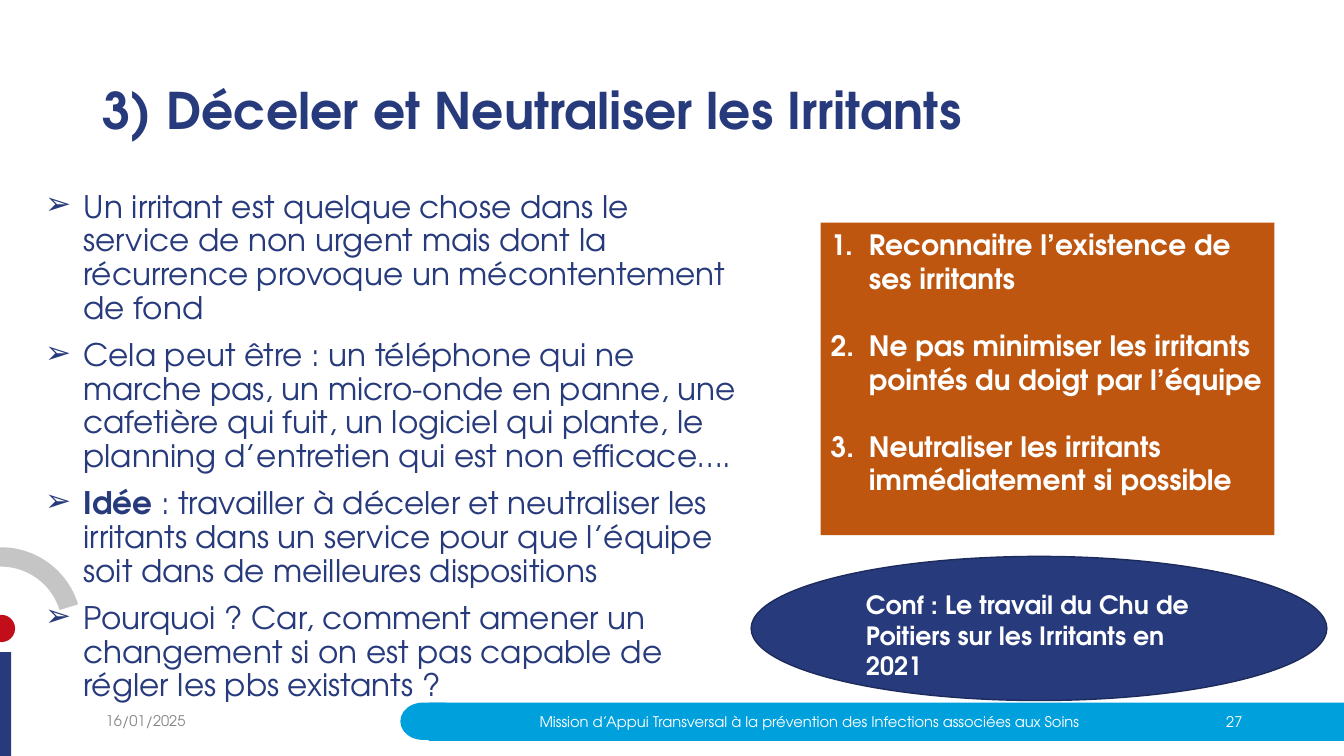
from dataclasses import dataclass

from lxml.etree import SubElement
from pptx import Presentation
from pptx.dml.color import RGBColor
from pptx.enum.shapes import MSO_SHAPE as Preset
from pptx.enum.text import MSO_ANCHOR as Anchor, PP_ALIGN as Align
from pptx.oxml.ns import qn
from pptx.util import Inches, Pt

FONT = "TeX Gyre Adventor"
NAVY, NAVY_EDGE, BLUE = "273A7C", "1D2B5C", "00A0DD"
ORANGE, RED, SILVER, GREY, WHITE = "BE560F", "C20E1A", "C5C5C5", "868686", "FFFFFF"
HANGING = 0.38

Box = tuple[float, float, float, float]


@dataclass
class Block:
    """A shape, drawn with a plain fill."""
    preset: Preset
    box: Box
    fill: str
    edge: str | None = None
    rotation: float = 0


@dataclass
class Style:
    size: float
    color: str
    bold: bool = False
    align: Align = Align.LEFT
    anchor: Anchor = Anchor.TOP
    line_spacing: float = 1.0
    gap: float = 0
    bullet: str | None = None
    numbered: bool = False


@dataclass
class Label:
    """A text box; each paragraph is a list of (text, bold) parts or a string."""
    box: Box
    paragraphs: list
    style: Style


def rgb(color: str) -> RGBColor:
    return RGBColor.from_string(color)


def draw_block(slide, block: Block):
    shape = slide.shapes.add_shape(block.preset, *map(Inches, block.box))
    shape.shadow.inherit = False
    shape.rotation = block.rotation
    shape.fill.solid()
    shape.fill.fore_color.rgb = rgb(block.fill)
    if block.edge:
        shape.line.color.rgb = rgb(block.edge)
        shape.line.width = Pt(1)
    else:
        shape.line.fill.background()
    return shape


def add_marker(paragraph, style: Style) -> None:
    properties = paragraph._p.get_or_add_pPr()
    properties.set("marL", str(Inches(HANGING)))
    properties.set("indent", str(-Inches(HANGING)))
    if style.numbered:
        SubElement(properties, qn("a:buFont"), typeface=FONT)
        SubElement(properties, qn("a:buAutoNum"), type="arabicPeriod")
    else:
        tint = SubElement(properties, qn("a:buClr"))
        SubElement(tint, qn("a:srgbClr"), val=style.color)
        SubElement(properties, qn("a:buFont"), typeface=FONT)
        SubElement(properties, qn("a:buChar"), char=style.bullet)


def write(frame, paragraphs: list, style: Style) -> None:
    frame.word_wrap = True
    frame.vertical_anchor = style.anchor
    for index, content in enumerate(paragraphs):
        paragraph = frame.add_paragraph() if index else frame.paragraphs[0]
        paragraph.alignment = style.align
        paragraph.line_spacing = style.line_spacing
        paragraph.space_before = Pt(style.gap if index else 0)
        if style.bullet or style.numbered:
            add_marker(paragraph, style)
        parts = [(content, style.bold)] if isinstance(content, str) else content
        for text, bold in parts:
            run = paragraph.add_run()
            run.text = text
            run.font.name = FONT
            run.font.size = Pt(style.size)
            run.font.bold = bold
            run.font.color.rgb = rgb(style.color)


def draw_label(slide, label: Label) -> None:
    frame = slide.shapes.add_textbox(*map(Inches, label.box)).text_frame
    write(frame, label.paragraphs, label.style)


# Left-edge decoration and footer band
ARC = Block(Preset.BLOCK_ARC, (-0.79, 5.43, 1.6, 1.6), SILVER)
DECORATION = [
    Block(Preset.RECTANGLE, (0, 6.47, 0.11, 1.03), NAVY),
    Block(Preset.OVAL, (-0.12, 6.1, 0.27, 0.27), RED),
    Block(Preset.RECTANGLE, (4.25, 6.97, 9.08, 0.38), BLUE),
    Block(Preset.FLOWCHART_DELAY, (3.97, 6.97, 0.45, 0.37), BLUE, rotation=180),
]

# Orange box of steps and conference bubble
STEPS_BOX = Block(Preset.RECTANGLE, (8.14, 2.21, 4.5, 3.1), ORANGE)
STEPS = [
    "Reconnaitre l’existence de ses irritants",
    "Ne pas minimiser les irritants pointés du doigt par l’équipe",
    "Neutraliser les irritants immédiatement si possible",
]
STEPS_STYLE = Style(20, WHITE, bold=True, gap=24, numbered=True)
CONFERENCE = Block(Preset.OVAL, (7.45, 5.52, 5.71, 1.43), NAVY, edge=NAVY_EDGE)

# Texts
LABELS = [
    Label((0.92, 0.4, 11.5, 1.45), ["3) Déceler et Neutraliser les Irritants"],
          Style(36, NAVY, bold=True, anchor=Anchor.MIDDLE, line_spacing=0.9)),
    Label((0.35, 1.85, 7.1, 4.91), [
        "Un irritant est quelque chose dans le service de non urgent mais dont la "
        "récurrence provoque un mécontentement de fond",
        "Cela peut être : un téléphone qui ne marche pas, un micro-onde en panne, "
        "une cafetière qui fuit, un logiciel qui plante, le planning d’entretien "
        "qui est non efficace….",
        [("Idée ", True),
         (": travailler à déceler et neutraliser les irritants dans un service pour "
          "que l’équipe soit dans de meilleures dispositions", False)],
        "Pourquoi ? Car, comment amener un changement si on est pas capable de "
        "régler les pbs existants ?",
    ], Style(22.2, NAVY, line_spacing=0.9, gap=10, bullet="➢")),
    Label((0.95, 6.95, 3, 0.4), ["16/01/2025"],
          Style(10.5, GREY, anchor=Anchor.MIDDLE)),
    Label((4.42, 6.96, 7.22, 0.4),
          ["Mission d’Appui Transversal à la prévention des Infections associées aux Soins"],
          Style(10.5, WHITE, align=Align.CENTER, anchor=Anchor.MIDDLE)),
    Label((11.83, 6.96, 0.59, 0.4), ["27"],
          Style(10.5, WHITE, align=Align.RIGHT, anchor=Anchor.MIDDLE)),
    Label((8.49, 5.8, 3.62, 1.01),
          ["Conf : Le travail du Chu de Poitiers sur les Irritants en 2021"],
          Style(18, WHITE, bold=True)),
]


def main() -> None:
    deck = Presentation()
    deck.slide_width, deck.slide_height = Inches(13.33), Inches(7.5)
    slide = deck.slides.add_slide(deck.slide_layouts[6])

    # Arc: start angle, end angle (0.6 per degree), thickness over width
    arc = draw_block(slide, ARC)
    for index, value in enumerate((197 * 0.6, 343 * 0.6, 0.12)):
        arc.adjustments[index] = value
    for block in DECORATION:
        draw_block(slide, block)

    steps_box = draw_block(slide, STEPS_BOX)
    write(steps_box.text_frame, STEPS, STEPS_STYLE)
    draw_block(slide, CONFERENCE)

    for label in LABELS:
        draw_label(slide, label)

    deck.save("out.pptx")


if __name__ == "__main__":
    main()
